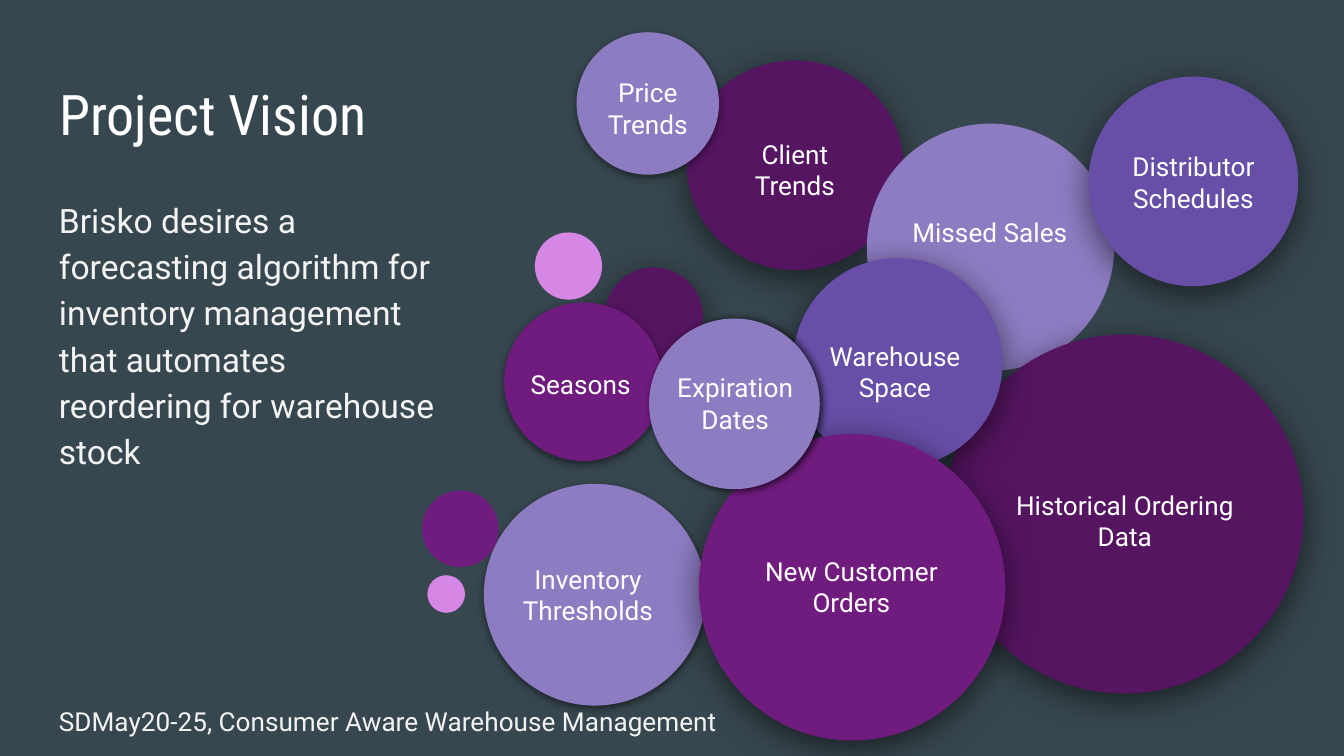
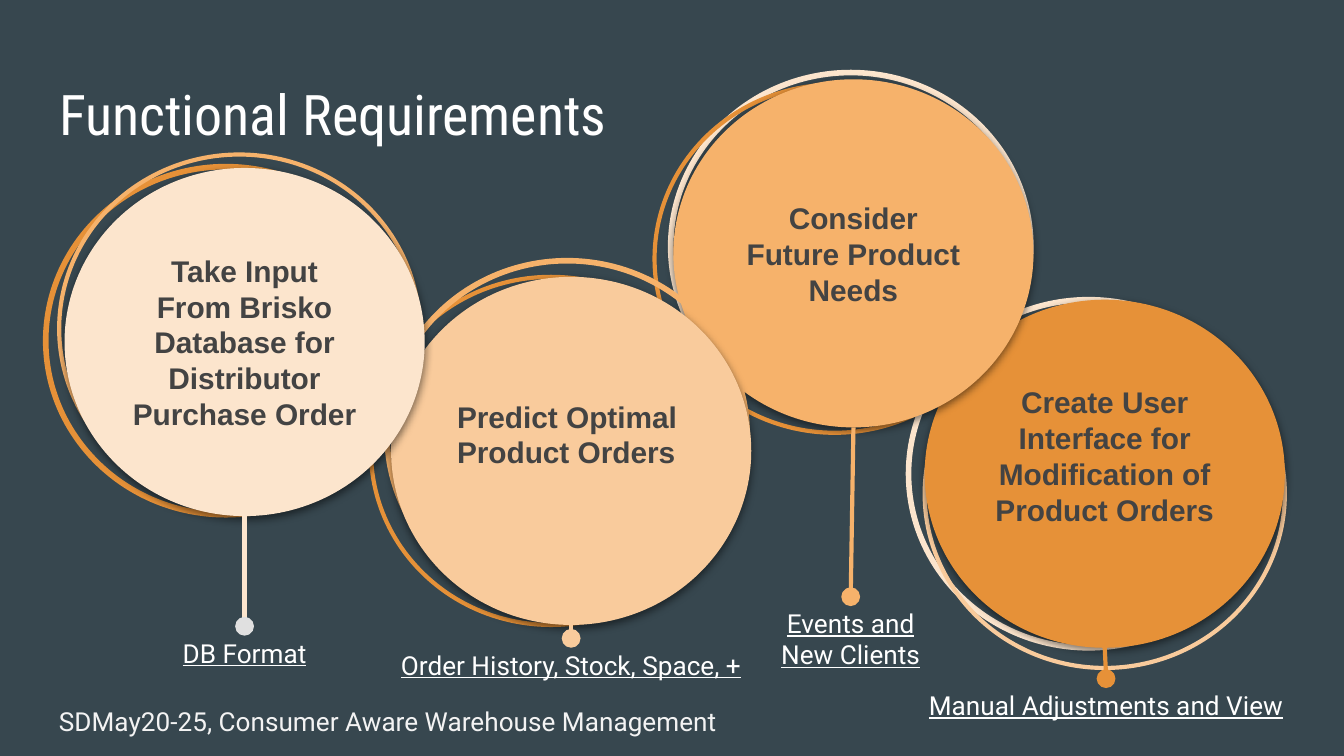
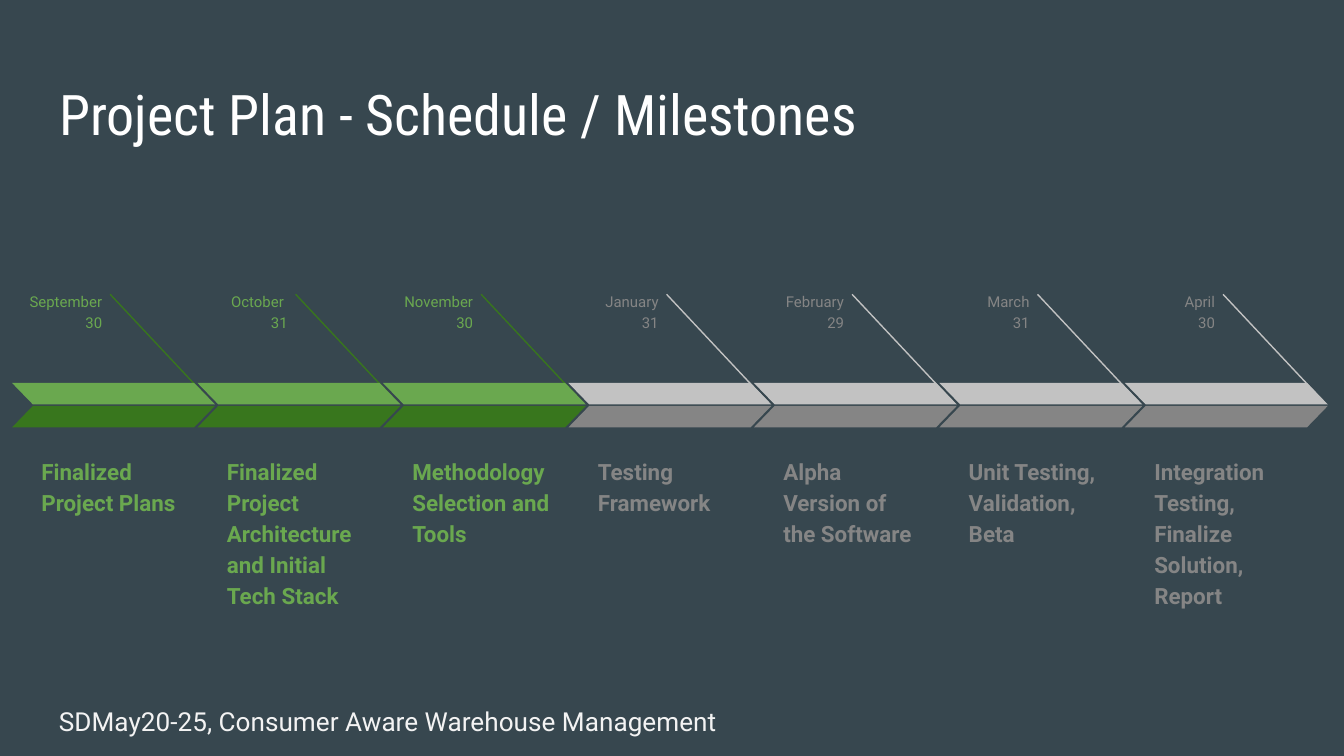
from lxml.etree import SubElement
from pptx import Presentation
from pptx.dml.color import RGBColor
from pptx.enum.shapes import MSO_CONNECTOR, MSO_SHAPE as Shape
from pptx.enum.text import MSO_ANCHOR as Anchor, MSO_AUTO_SIZE, PP_ALIGN as Align
from pptx.oxml.ns import qn
from pptx.util import Inches, Pt

# Shared look
BACKGROUND, WHITE, PALE, INK = "37474F", "FFFFFF", "F3F3F3", "434343"
PLUM, PURPLE, LILAC, VIOLET, PINK = "551561", "701C7F", "8E7CC3", "674EA7", "D686E4"
CREAM, PEACH, APRICOT, ORANGE, MIST = "FCE5CD", "F9CB9C", "F6B26B", "E69138", "E0E0E0"
LEAF, FOREST, SILVER, GREY = "6AA84F", "38761D", "C2C2C2", "858585"

TITLE = dict(name="Roboto Condensed", size=Pt(30))
BODY = dict(name="Roboto", size=Pt(18))
NOTE = dict(name="Roboto", size=Pt(14))
CAPTION = dict(name="Roboto", size=Pt(14), underline=True)
DISC = dict(name="Arial", size=Pt(16), bold=True)
DATE = dict(name="Roboto", size=Pt(8))
TASK = dict(name="Roboto", size=Pt(12), bold=True)

# Shadows: opacity in percent, blur and distance in points, angle in degrees
DEEP = (55, 18, 4, 90)
SOFT = (50, 4.5, 1.5, 90)
SIDE = (77, 4.5, 1.5, 18)

FOOTER = "SDMay20-25, Consumer Aware Warehouse Management"


def colour(value):
    return RGBColor.from_string(value)


def inches(*lengths):
    return [Inches(length) for length in lengths]


# Basic parts
def write(shape, text, font, ink, anchor=Anchor.TOP, bottom=0.1, **para_format):
    frame = shape.text_frame
    frame.text = text
    frame_format = dict(word_wrap=True, auto_size=MSO_AUTO_SIZE.NONE,
                        vertical_anchor=anchor, margin_left=Inches(0.1),
                        margin_right=Inches(0.1), margin_top=Inches(0.1),
                        margin_bottom=Inches(bottom))
    for name, value in frame_format.items():
        setattr(frame, name, value)
    para = frame.paragraphs[0]
    for name, value in {"alignment": Align.LEFT, **para_format}.items():
        setattr(para, name, value)
    for span in para.runs:
        for name, value in font.items():
            setattr(span.font, name, value)
        span.font.color.rgb = colour(ink)


def add_text(shapes, box, text, font, ink, **layout):
    write(shapes.add_textbox(*inches(*box)), text, font, ink, **layout)


def add_shadow(shape, opacity, blur, distance, angle):
    effects = shape.element.spPr.find(qn("a:effectLst"))
    shadow = SubElement(effects, qn("a:outerShdw"), blurRad=str(Pt(blur)),
                        dist=str(Pt(distance)), dir=str(angle * 60000),
                        algn="bl", rotWithShape="0")
    tint = SubElement(shadow, qn("a:srgbClr"), val="000000")
    SubElement(tint, qn("a:alpha"), val=str(opacity * 1000))


def add_filled(shapes, kind, box, fill, shadow=None):
    shape = shapes.add_shape(kind, *inches(*box))
    shape.shadow.inherit = False
    shape.fill.solid()
    shape.fill.fore_color.rgb = colour(fill)
    shape.line.fill.background()
    if shadow:
        add_shadow(shape, *shadow)
    return shape


def add_ring(shapes, box, ink, width):
    ring = shapes.add_shape(Shape.OVAL, *inches(*box))
    ring.shadow.inherit = False
    ring.fill.background()
    ring.line.color.rgb = colour(ink)
    ring.line.width = Pt(width)


def add_line(shapes, start, end, ink, width):
    line = shapes.add_connector(MSO_CONNECTOR.STRAIGHT, *inches(*start, *end))
    line.line.color.rgb = colour(ink)
    line.line.width = Pt(width)
    SubElement(line.element.spPr, qn("a:effectLst"))


def add_page(deck, heading):
    page = deck.slides.add_slide(deck.slide_layouts[5])
    title = page.shapes.title
    title.left, title.top, title.width, title.height = inches(0.34, 0.49, 9.32, 0.63)
    write(title, heading, TITLE, WHITE)
    add_text(page.shapes, (0.34, 5.15, 9.32, 0.33), FOOTER, NOTE, PALE)
    return page


# Project vision: circles from back to front, with label and label box
FACTORS = [
    ((4.5, 1.99, 0.73, 0.73), PLUM, DEEP, None, None),
    ((3.75, 2.25, 1.18, 1.18), PURPLE, SOFT, "Seasons", (3.66, 2.41, 1.32, 0.9)),
    ((5.11, 0.45, 1.61, 1.56), PLUM, DEEP, "Client Trends", (5.3, 0.89, 1.23, 0.74)),
    ((3.6, 3.6, 1.65, 1.65), LILAC, SOFT, "Inventory Thresholds", (3.57, 3.91, 1.61, 1.03)),
    ((6.45, 0.92, 1.84, 1.84), LILAC, None, "Missed Sales", (6.56, 1.21, 1.61, 1.03)),
    ((7.03, 2.49, 2.67, 2.67), PLUM, DEEP, "Historical Ordering Data", (7.35, 3.24, 2.04, 1.27)),
    ((5.9, 1.92, 1.56, 1.56), VIOLET, DEEP, "Warehouse Space", (5.98, 2.19, 1.36, 1.15)),
    ((5.2, 3.23, 2.28, 2.28), PURPLE, DEEP, "New Customer Orders", (5.56, 3.61, 1.55, 1.51)),
    ((4.29, 0.24, 1.06, 1.06), LILAC, SOFT, "Price Trends", (4.2, 0.49, 1.24, 0.63)),
    ((8.1, 0.57, 1.56, 1.56), VIOLET, DEEP, "Distributor Schedules", (8.22, 0.77, 1.32, 1.17)),
    ((4.83, 2.37, 1.27, 1.27), LILAC, SIDE, "Expiration Dates", (4.81, 2.55, 1.32, 0.9)),
    ((3.98, 1.73, 0.5, 0.5), PINK, None, None, None),
    ((3.14, 3.65, 0.57, 0.57), PURPLE, None, None, None),
    ((3.18, 4.28, 0.28, 0.28), PINK, None, None, None),
]


def build_vision(deck):
    shapes = add_page(deck, "Project Vision").shapes
    add_text(shapes, (0.34, 1.34, 3, 1.89),
             "Brisko desires a forecasting algorithm for inventory management "
             "that automates reordering for warehouse stock",
             BODY, PALE, line_spacing=1.15)
    for circle, fill, shadow, label, label_box in FACTORS:
        add_filled(shapes, Shape.OVAL, circle, fill, shadow)
        if label:
            add_text(shapes, label_box, label, NOTE, WHITE,
                     anchor=Anchor.MIDDLE, alignment=Align.CENTER)


# Functional requirements, from back to front.
# Rings: offset from the disc, colour, width. Foot: centre and top of the caption.
DISC_SIZE = (2.68, 2.59)
REQUIREMENTS = [
    dict(at=(6.88, 2.23), fill=ORANGE, dot=ORANGE, bottom=0.37, align=Align.CENTER,
         text="Create User Interface for Modification of Product Orders",
         rings=[(-0.12, 0, CREAM, 3), (0, 0.15, PEACH, 2.25)],
         foot=(8.23, 5.03), caption="Manual Adjustments and View", width=2.93),
    dict(at=(5.01, 0.59), fill=APRICOT, dot=APRICOT, bottom=0.1, align=Align.CENTER,
         text="Consider Future Product Needs",
         rings=[(-0.02, -0.05, CREAM, 3), (-0.14, 0.04, ORANGE, 2.25)],
         foot=(6.33, 4.42), caption="Events and New Clients", width=1.53),
    dict(at=(2.91, 2.06), fill=PEACH, dot=PEACH, bottom=0.35, align=Align.LEFT,
         text="Predict Optimal Product Orders",
         rings=[(-0.15, 0, ORANGE, 2.25), (-0.03, -0.12, APRICOT, 3)],
         foot=(4.25, 4.73), caption="Order History, Stock, Space, +", width=2.86),
    dict(at=(0.48, 1.25), fill=CREAM, dot=MIST, bottom=0.1, align=Align.CENTER,
         text="Take Input From Brisko Database for Distributor Purchase Order",
         rings=[(-0.14, -0.01, ORANGE, 3), (-0.04, -0.1, APRICOT, 2.25)],
         foot=(1.82, 4.64), caption="DB Format", width=1.34),
]


def add_requirement(shapes, item):
    left, top = item["at"]
    width, height = DISC_SIZE
    for across, down, ink, weight in item["rings"]:
        add_ring(shapes, (left + across, top + down, width, height), ink, weight)
    disc = add_filled(shapes, Shape.OVAL, (left, top, width, height), item["fill"], SOFT)
    write(disc, item["text"], DISC, INK, anchor=Anchor.MIDDLE,
          bottom=item["bottom"], alignment=item["align"])
    # Stem, caption and dot
    foot_x, foot_y = item["foot"]
    add_line(shapes, (left + width / 2, top + height), item["foot"], item["fill"], 2.25)
    add_text(shapes, (foot_x - item["width"] / 2, foot_y, item["width"], 0.33),
             item["caption"], CAPTION, WHITE, alignment=Align.CENTER)
    add_filled(shapes, Shape.OVAL, (foot_x - 0.07, foot_y - 0.05, 0.14, 0.14), item["dot"])


def build_requirements(deck):
    shapes = add_page(deck, "Functional Requirements").shapes
    for item in REQUIREMENTS:
        add_requirement(shapes, item)


# Project plan: date, task
DONE = [
    ("September 30", "Finalized Project Plans"),
    ("October \v31", "Finalized Project Architecture and Initial Tech Stack"),
    ("November 30", "Methodology Selection and Tools"),
]
AHEAD = [
    ("January 31", "Testing Framework"),
    ("February 29", "Alpha Version of the Software"),
    ("March 31", "Unit Testing, Validation, Beta"),
    ("April\v30", "Integration Testing, Finalize Solution, Report"),
]
# Upper band, lower band, line, text, date width
DONE_LOOK = (LEAF, FOREST, FOREST, LEAF, 0.76)
AHEAD_LOOK = (SILVER, GREY, SILVER, GREY, 0.66)


def add_milestone(shapes, left, top, date, task, look):
    upper, lower, line_ink, text_ink, date_width = look
    add_line(shapes, (left + 0.73, top + 0.13), (left + 1.49, top + 0.94), line_ink, 0.75)
    for down, fill in ((0.79, upper), (0.96, lower)):
        band = add_filled(shapes, Shape.PARALLELOGRAM, (left, top + down, 1.51, 0.16), fill)
        band.adjustments[0] = 0.97
        if fill == upper:
            band.element.spPr.xfrm.set("flipH", "1")
    add_text(shapes, (left + 0.12, top + 1.22, 1.24, 0.49), task, TASK, text_ink,
             line_spacing=1.15)
    add_text(shapes, (left + 0.77 - date_width, top, date_width, 0.26), date, DATE,
             text_ink, alignment=Align.RIGHT, line_spacing=1.15, space_after=Pt(16))


def build_plan(deck):
    page = add_page(deck, "Project Plan - Schedule / Milestones")
    milestones = [(*step, DONE_LOOK) for step in DONE]
    milestones += [(*step, AHEAD_LOOK) for step in AHEAD]
    for index, milestone in enumerate(milestones):
        group = page.shapes.add_group_shape()
        add_milestone(group.shapes, 0.09 + 1.38 * index, 2.06, *milestone)


def main():
    deck = Presentation()
    # Widescreen, 16 to 9
    deck.slide_width, deck.slide_height = inches(10, 10 * 9 / 16)
    backdrop = deck.slide_master.background.fill
    backdrop.solid()
    backdrop.fore_color.rgb = colour(BACKGROUND)
    for build in (build_vision, build_requirements, build_plan):
        build(deck)
    deck.save("out.pptx")


if __name__ == "__main__":
    main()
